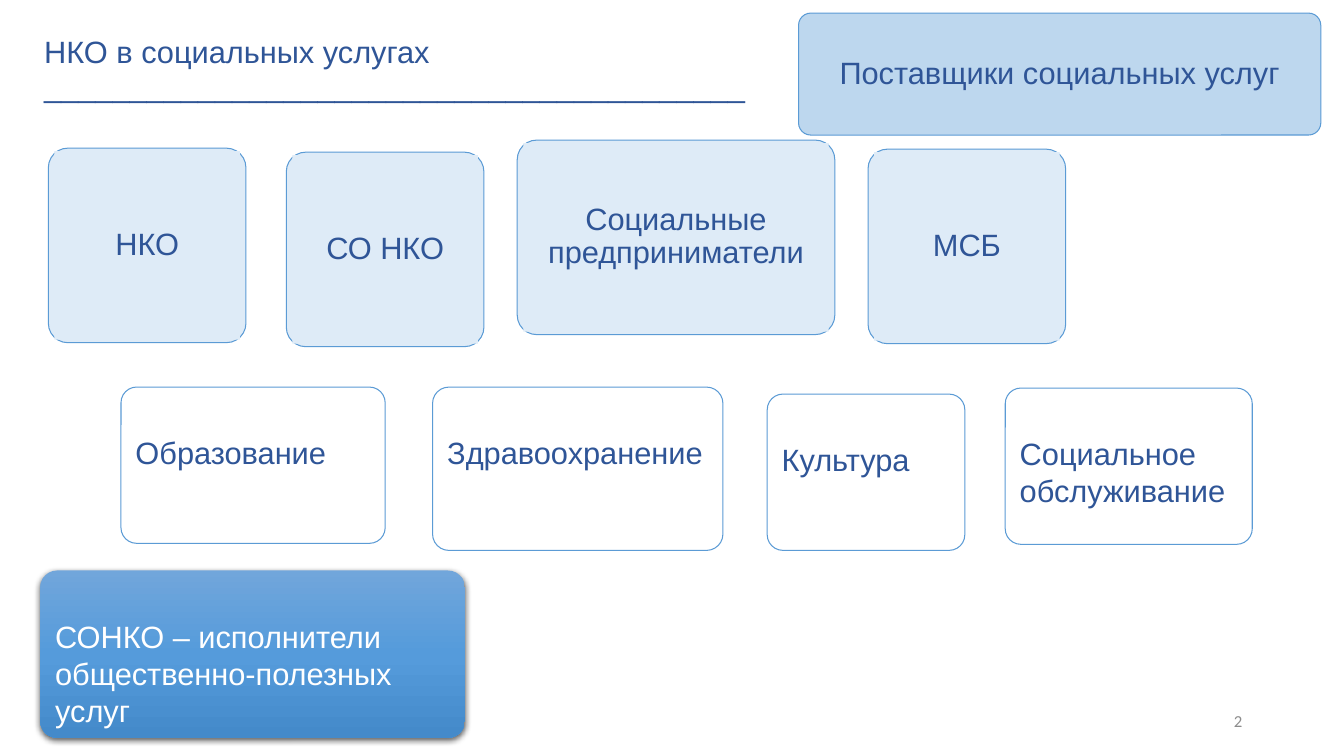
from pptx import Presentation
from pptx.dml.color import RGBColor
from pptx.enum.shapes import MSO_SHAPE as Shape
from pptx.enum.text import MSO_ANCHOR as Anchor, PP_ALIGN as Align
from pptx.oxml import parse_xml
from pptx.oxml.ns import nsdecls, qn
from pptx.util import Inches, Pt

COLORS = {
    "text": "2F5597",
    "outline": "5B9BD5",
    "banner": "BDD7EE",
    "card": "DEEBF7",
    "white": "FFFFFF",
    "number": "8C8C8C",
}
SUMMARY_STOPS = {0: "71A6DB", 50: "559BDB", 100: "448ACA"}

PROVIDERS = [
    ("НКО", (0.48, 1.47, 1.96, 1.93)),
    ("Социальные предприниматели", (5.13, 1.39, 3.15, 1.93)),
    ("МСБ", (8.61, 1.48, 1.96, 1.93)),
    ("СО НКО", (2.84, 1.51, 1.96, 1.93)),
]
SECTORS = [
    (["Образование"], (1.2, 3.84, 2.62, 1.55)),
    (["Здравоохранение"], (4.29, 3.84, 2.88, 1.62)),
    (["Культура"], (7.61, 3.91, 1.96, 1.55)),
    (["Социальное", "обслуживание"], (9.97, 3.85, 2.45, 1.55)),
]


def color(name):
    return RGBColor.from_string(COLORS[name])


def write(shape, lines, ink="text", size=22, font="Arial", align=Align.LEFT,
          anchor=Anchor.MIDDLE, spacing=None):
    """Fill a shape with one paragraph per line."""
    frame = shape.text_frame
    frame.word_wrap = True
    frame.vertical_anchor = anchor
    frame.text = "\n".join(lines)
    for para in frame.paragraphs:
        para.alignment = align
        para.line_spacing = spacing
        para.font.name = font
        para.font.size = Pt(size)
        para.font.color.rgb = color(ink)
    return frame


def add_rounded(shapes, box, fill=None):
    shape = shapes.add_shape(Shape.ROUNDED_RECTANGLE, *map(Inches, box))
    shape.adjustments[0] = 0.1
    shape.shadow.inherit = False
    shape.line.color.rgb = color("outline")
    shape.line.width = Pt(0.75)
    if fill:
        shape.fill.solid()
        shape.fill.fore_color.rgb = color(fill)
    else:
        shape.fill.background()
    return shape


def add_title(page, box):
    title = page.shapes.add_textbox(*map(Inches, box))
    write(title, ["НКО в социальных услугах\v" + "_" * 41], spacing=0.9)


def add_card(page, label, box, fill, fill_label=True):
    """Group a rounded card with the label area inside it."""
    left, top, width, height = box
    group = page.shapes.add_group_shape()
    add_rounded(group.shapes, box, fill)
    inner = (left + 0.06, top + 0.03, width - 0.12, height - 0.06)
    area = group.shapes.add_textbox(*map(Inches, inner))
    if fill_label:
        area.fill.solid()
        area.fill.fore_color.rgb = color(fill)
    frame = write(area, [label], align=Align.CENTER, spacing=0.9)
    frame.margin_left = frame.margin_right = Inches(0.09)
    frame.margin_top = frame.margin_bottom = Inches(0.09)


def add_sector(page, lines, box, ink="text"):
    """Add an outlined box whose text starts one line below its top."""
    shape = add_rounded(page.shapes, box)
    frame = write(shape, lines, ink, anchor=Anchor.TOP)
    frame.margin_top = Inches(0.42)
    return shape


def add_summary(page, box):
    shape = add_sector(page, ["СОНКО – исполнители общественно-полезных услуг"],
                       box, "white")
    shape.line.fill.background()
    properties = shape._element.spPr
    stops = "".join(
        f'<a:gs pos="{position * 1000}"><a:srgbClr val="{value}"/></a:gs>'
        for position, value in SUMMARY_STOPS.items())
    gradient = parse_xml(
        f'<a:gradFill {nsdecls("a")} rotWithShape="1"><a:gsLst>{stops}</a:gsLst>'
        '<a:lin ang="5400000" scaled="0"/></a:gradFill>')
    properties.replace(properties.find(qn("a:noFill")), gradient)
    properties.find(qn("a:effectLst")).append(parse_xml(
        f'<a:outerShdw {nsdecls("a")} blurRad="{Pt(4.5)}" dist="{Pt(1.5)}" '
        'dir="5400000" algn="ctr" rotWithShape="0">'
        '<a:srgbClr val="000000"><a:alpha val="63000"/></a:srgbClr></a:outerShdw>'))


def add_page_number(page, box):
    number = page.shapes.add_textbox(*map(Inches, box))
    write(number, ["2"], "number", 12, "Calibri", Align.RIGHT)


def main():
    deck = Presentation()
    deck.slide_width, deck.slide_height = Inches(13.33), Inches(7.5)
    page = deck.slides.add_slide(deck.slide_layouts[6])
    add_title(page, (0.34, 0.19, 9.76, 1.02))
    add_page_number(page, (9.42, 6.95, 3, 0.4))
    add_card(page, "Поставщики социальных услуг", (7.92, 0.13, 5.18, 1.21),
             "banner", fill_label=False)
    for label, box in PROVIDERS:
        add_card(page, label, box, "card")
    for lines, box in SECTORS:
        add_sector(page, lines, box)
    add_summary(page, (0.4, 5.66, 4.21, 1.66))
    deck.save("out.pptx")


if __name__ == "__main__":
    main()
